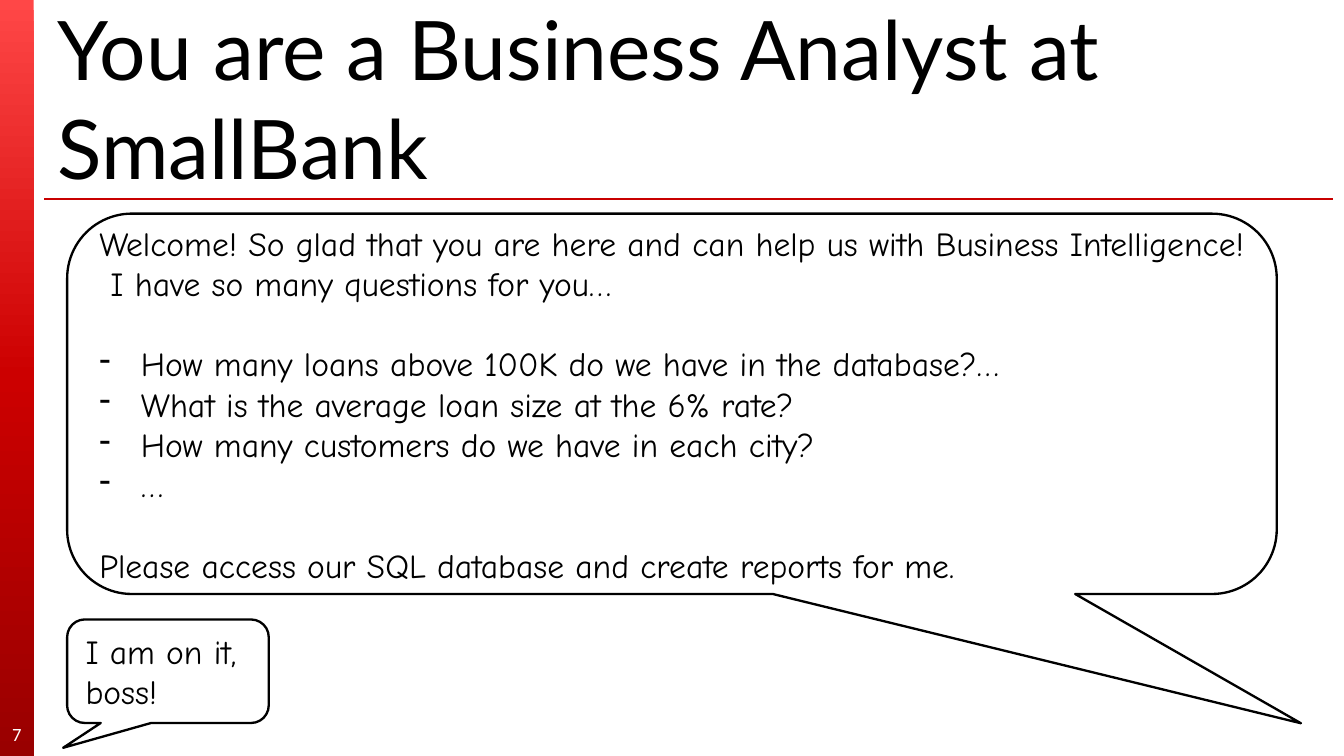
from copy import deepcopy

from lxml import etree
from pptx import Presentation
from pptx import util as u
from pptx.dml.color import RGBColor
from pptx.enum import shapes, text
from pptx.oxml.ns import qn

BLACK = RGBColor(0x00, 0x00, 0x00)
WHITE = RGBColor(0xFF, 0xFF, 0xFF)
RULE_RED = RGBColor(0xC8, 0x00, 0x00)
BAR_STOPS = [
    (0, RGBColor(0xFF, 0x47, 0x47)),
    (0.5, RGBColor(0xCC, 0x00, 0x00)),
    (1, RGBColor(0x99, 0x00, 0x00)),
]
LINE_HEIGHT = u.Pt(21.5)


def add_run(paragraph, words, font, size, color=BLACK):
    run = paragraph.add_run()
    run.text = words
    run.font.name = font
    run.font.size = u.Pt(size)
    run.font.color.rgb = color


def add_callout(left, top, width, height, adjustments):
    shape = slide.shapes.add_shape(
        shapes.MSO_SHAPE.ROUNDED_RECTANGULAR_CALLOUT,
        u.Inches(left), u.Inches(top), u.Inches(width), u.Inches(height))
    for index, value in enumerate(adjustments):
        shape.adjustments[index] = value
    shape.shadow.inherit = False
    shape.fill.solid()
    shape.fill.fore_color.rgb = WHITE
    shape.line.color.rgb = BLACK
    shape.line.width = u.Pt(1.25)
    shape.text_frame.word_wrap = True
    shape.text_frame.vertical_anchor = text.MSO_ANCHOR.MIDDLE
    shape.text_frame.paragraphs[0].alignment = text.PP_ALIGN.LEFT
    return shape.text_frame


# Widescreen 16:9 slide
presentation = Presentation()
presentation.slide_width = u.Inches(10)
presentation.slide_height = u.Inches(10) * 9 // 16
slide = presentation.slides.add_slide(presentation.slide_layouts[6])

# Red gradient bar on the left
bar = slide.shapes.add_shape(
    shapes.MSO_SHAPE.RECTANGLE, 0, 0, u.Inches(0.25), presentation.slide_height)
bar.shadow.inherit = False
bar.line.fill.background()
bar.fill.gradient()
bar.fill.gradient_angle = 270
stop_list = bar._element.spPr.find(qn("a:gradFill")).find(qn("a:gsLst"))
stop_list.append(deepcopy(stop_list[-1]))
for stop, (position, color) in zip(bar.fill.gradient_stops, BAR_STOPS):
    stop.position = position
    stop.color.rgb = color

# Rule below the title
rule = slide.shapes.add_connector(
    shapes.MSO_CONNECTOR.STRAIGHT,
    u.Inches(0.33), u.Inches(1.48), u.Inches(9.92), u.Inches(1.48))
rule.line.color.rgb = RULE_RED
rule.line.width = u.Pt(0.75)
etree.SubElement(rule._element.spPr, qn("a:effectLst"))

# Title
title = slide.shapes.add_textbox(
    u.Inches(0.33), u.Inches(0.06), u.Inches(9.58), u.Inches(1.33))
title.text_frame.word_wrap = True
title.text_frame.vertical_anchor = text.MSO_ANCHOR.MIDDLE
add_run(title.text_frame.paragraphs[0],
        "You are a Business Analyst at SmallBank", "Lato", 44)

# Slide number
number = slide.shapes.add_textbox(
    0, u.Inches(5.31), u.Inches(0.25), u.Inches(0.3))
frame = number.text_frame
frame.margin_left = frame.margin_right = frame.margin_top = frame.margin_bottom = 0
frame.word_wrap = True
frame.vertical_anchor = text.MSO_ANCHOR.MIDDLE
frame.paragraphs[0].alignment = text.PP_ALIGN.CENTER
add_run(frame.paragraphs[0], "7", "Calibri", 10, WHITE)

# Boss's speech: greeting, bulleted questions, request
speech = add_callout(0.5, 1.59, 9, 2.83, (0.52, 0.84, 0.17))
greeting = speech.paragraphs[0]
add_run(greeting,
        "Welcome! So glad that you are here and can help us with Business Intelligence!",
        "Comic Neue", 18)
greeting.add_line_break()
add_run(greeting, " I have so many questions for you…", "Comic Neue", 18)
greeting.space_after = LINE_HEIGHT

questions = [
    "How many loans above 100K do we have in the database?…",
    "What is the average loan size at the 6% rate?",
    "How many customers do we have in each city?",
    "…",
]
for question in questions:
    paragraph = speech.add_paragraph()
    paragraph.alignment = text.PP_ALIGN.LEFT
    properties = paragraph._p.get_or_add_pPr()
    properties.set("marL", str(u.Inches(0.31)))
    properties.set("indent", str(-u.Inches(0.31)))
    etree.SubElement(properties, qn("a:buFontTx"))
    etree.SubElement(properties, qn("a:buChar"), char="-")
    add_run(paragraph, question, "Comic Neue", 18)

request = speech.add_paragraph()
request.alignment = text.PP_ALIGN.LEFT
request.space_before = LINE_HEIGHT
add_run(request, "Please access our SQL database and create reports for me.",
        "Comic Neue", 18)

# Analyst's reply
reply = add_callout(0.5, 4.61, 1.5, 0.77, (-0.52, 0.74, 0.17))
add_run(reply.paragraphs[0], "I am on it, boss!", "Comic Neue", 18)

presentation.save("out.pptx")
